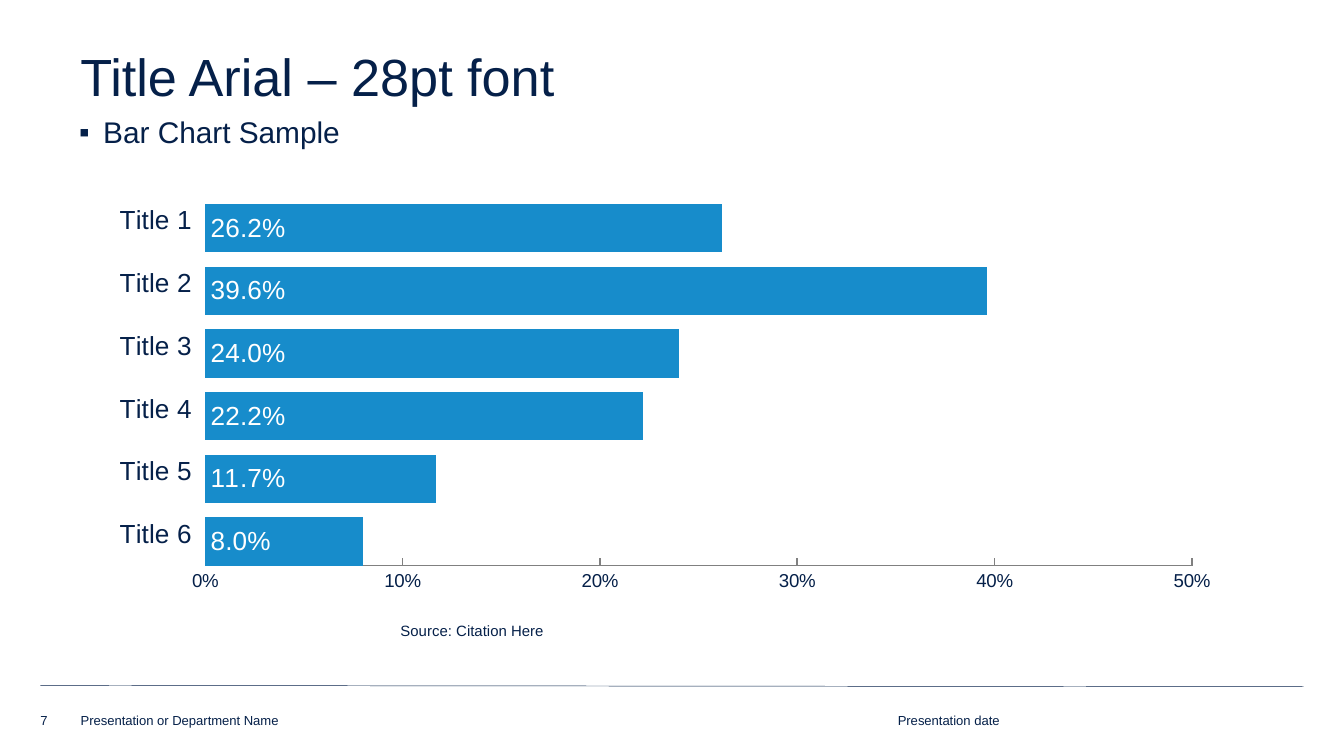
from lxml import etree
from pptx import Presentation
from pptx.chart.data import CategoryChartData
from pptx.dml.color import RGBColor
from pptx.enum.chart import XL_CHART_TYPE, XL_LABEL_POSITION, XL_TICK_MARK
from pptx.enum.shapes import MSO_CONNECTOR
from pptx.enum.text import MSO_ANCHOR
from pptx.oxml import parse_xml
from pptx.oxml.ns import nsdecls, qn
from pptx.util import Inches, Pt

BAR_CLUSTERED = XL_CHART_TYPE.BAR_CLUSTERED
INSIDE_BASE = XL_LABEL_POSITION.INSIDE_BASE
TICK_INSIDE, TICK_OUTSIDE = XL_TICK_MARK.INSIDE, XL_TICK_MARK.OUTSIDE
STRAIGHT = MSO_CONNECTOR.STRAIGHT
TOP, BOTTOM = MSO_ANCHOR.TOP, MSO_ANCHOR.BOTTOM

FONT = "Arial"
COLORS = {"navy": "052049", "blue": "178CCB", "white": "FFFFFF", "gray": "808080"}

# text, (left, top, width, height), size, line spacing, inset, anchor
TITLE = ("Title Arial – 28pt font", (0.5, 0.35, 8.84, 0.5), 28, 0.85, True, TOP)
BODY = ("Bar Chart Sample", (0.49, 0.83, 8.83, 0.31), 16, 0.9, True, TOP)
SMALL_TEXTS = [
    ("Presentation date", (6.68, 5.29, 1.01, 0.13), 7, 1.0, False, BOTTOM),
    ("Presentation or Department Name", (0.6, 5.31, 4.71, 0.11), 7, 1.0, False, BOTTOM),
    ("7", (0.3, 5.29, 0.27, 0.13), 7, 1.0, False, BOTTOM),
    ("Source: Citation Here", (2.98, 4.64, 1.66, 0.12), 8, 0.9, False, TOP),
]
BARS = [
    ("Title 6", 0.08), ("Title 5", 0.117), ("Title 4", 0.222),
    ("Title 3", 0.24), ("Title 2", 0.396), ("Title 1", 0.262),
]
CHART_BOX = (0.57, 1.18, 9.03, 3.33)
PLOT_LAYOUT = {"x": 0.106, "y": 0.069, "w": 0.813, "h": 0.841}


def color(name):
    return RGBColor.from_string(COLORS[name])


def style_font(font, size, color_name="navy"):
    font.name = FONT
    font.size = Pt(size)
    font.color.rgb = color(color_name)


def add_text(slide, text, box, size, spacing, inset, anchor, bullet=None):
    shape = slide.shapes.add_textbox(*map(Inches, box))
    frame = shape.text_frame
    frame.word_wrap = True
    frame.vertical_anchor = anchor
    if not inset:
        frame.margin_left = frame.margin_right = 0
        frame.margin_top = frame.margin_bottom = 0
    paragraph = frame.paragraphs[0]
    paragraph.text = text
    paragraph.line_spacing = spacing
    if bullet:
        add_bullet(paragraph, bullet)
    style_font(paragraph.font, size)


def add_bullet(paragraph, character):
    properties = paragraph._p.get_or_add_pPr()
    properties.set("marL", str(Inches(0.18)))
    properties.set("indent", str(-Inches(0.18)))
    bullet_color = etree.SubElement(properties, qn("a:buClr"))
    etree.SubElement(bullet_color, qn("a:srgbClr"), val=COLORS["navy"])
    etree.SubElement(properties, qn("a:buFont"), typeface=FONT)
    etree.SubElement(properties, qn("a:buChar"), char=character)


def set_plot_layout(chart):
    """Fix the inner plot area as fractions of the chart box."""
    modes = "".join(f'<c:{side}Mode val="edge"/>' for side in "xy")
    sizes = "".join(f'<c:{key} val="{value}"/>' for key, value in PLOT_LAYOUT.items())
    layout = parse_xml(
        f'<c:layout {nsdecls("c")}><c:manualLayout><c:layoutTarget val="inner"/>'
        f"{modes}{sizes}</c:manualLayout></c:layout>"
    )
    plot_area = chart._chartSpace.chart.plotArea
    for old_layout in plot_area.findall(qn("c:layout")):
        plot_area.remove(old_layout)
    plot_area.insert(0, layout)


def add_bar_chart(slide):
    data = CategoryChartData(number_format="0.0%")
    data.categories = [name for name, _ in BARS]
    data.add_series("Series 1", [value for _, value in BARS])
    data.add_series("Series 2", [None] * len(BARS))
    chart = slide.shapes.add_chart(BAR_CLUSTERED, *map(Inches, CHART_BOX), data).chart
    chart.has_legend = False
    chart.has_title = False
    style_font(chart.font, 18)
    chart.font.name = "Times New Roman"
    set_plot_layout(chart)

    plot = chart.plots[0]
    plot.vary_by_categories = False
    plot.gap_width = 0
    plot.overlap = 70
    for series in plot.series:
        series.format.fill.solid()
        series.format.fill.fore_color.rgb = color("blue")

    labels = plot.series[0].data_labels
    labels.show_value = True
    labels.position = INSIDE_BASE
    labels.number_format = "0.0%"
    labels.number_format_is_linked = False
    style_font(labels.font, 14, "white")

    category_axis = chart.category_axis
    category_axis.major_tick_mark = TICK_OUTSIDE
    category_axis.format.line.fill.background()
    style_font(category_axis.tick_labels.font, 14)

    value_axis = chart.value_axis
    value_axis.minimum_scale = 0
    value_axis.maximum_scale = 0.5
    value_axis.major_unit = 0.1
    value_axis.has_major_gridlines = False
    value_axis.major_tick_mark = TICK_INSIDE
    value_axis.format.line.color.rgb = color("gray")
    value_axis.tick_labels.number_format = "0%"
    value_axis.tick_labels.number_format_is_linked = False
    style_font(value_axis.tick_labels.font, 10)


def add_footer_line(slide):
    ends = map(Inches, (0.3, 5.1, 9.7, 5.11))
    line = slide.shapes.add_connector(STRAIGHT, *ends)
    line.line.color.rgb = color("navy")
    line.line.width = Pt(0.25)
    etree.SubElement(line._element.spPr, qn("a:effectLst"))


def main():
    presentation = Presentation()
    presentation.slide_width = Inches(10)
    presentation.slide_height = presentation.slide_width * 9 // 16
    slide = presentation.slides.add_slide(presentation.slide_layouts[6])
    add_footer_line(slide)
    add_text(slide, *TITLE)
    add_text(slide, *BODY, bullet="▪")
    add_bar_chart(slide)
    for small_text in SMALL_TEXTS:
        add_text(slide, *small_text)
    presentation.save("out.pptx")


if __name__ == "__main__":
    main()
